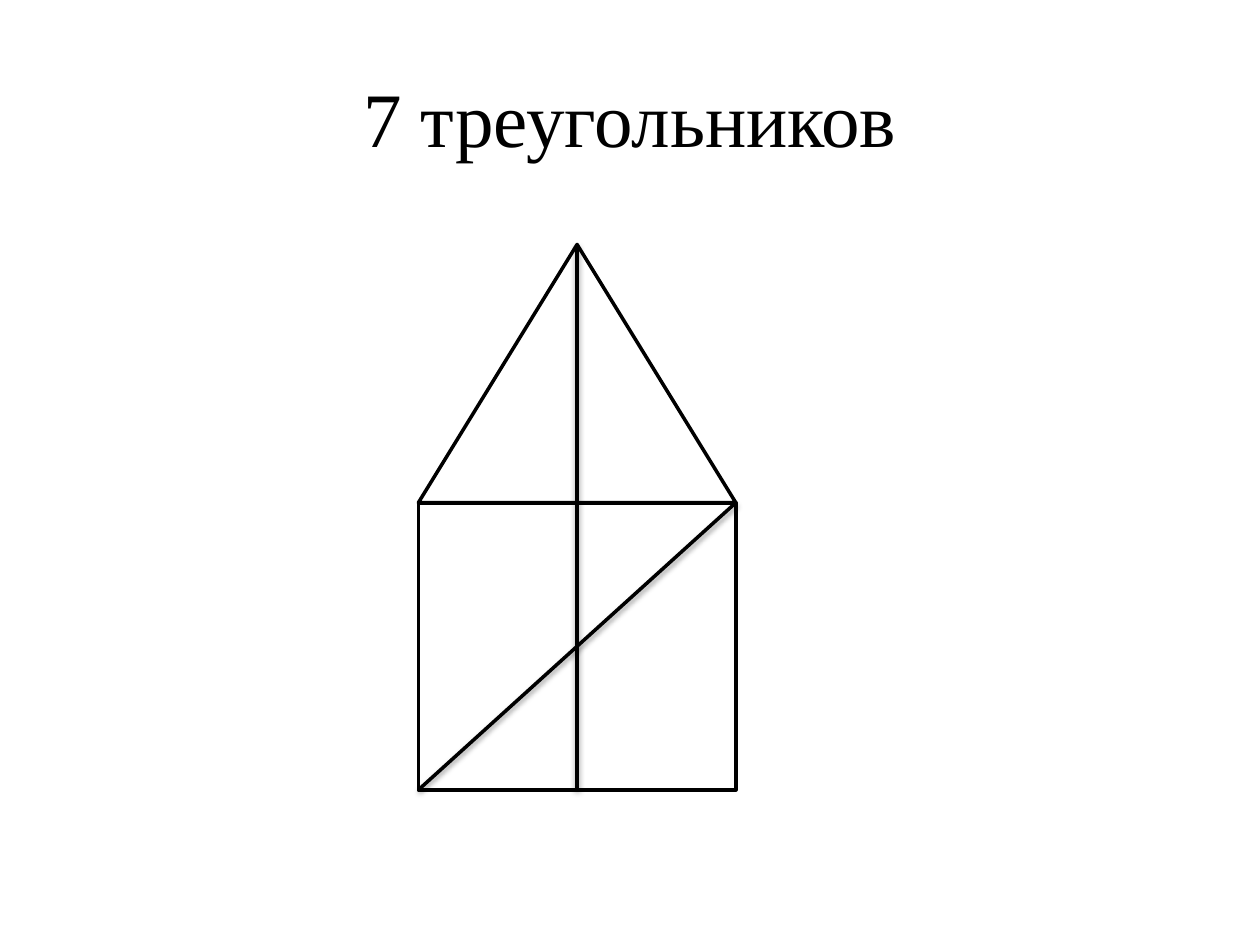
from dataclasses import dataclass

from lxml import etree
from pptx import Presentation
from pptx.dml.color import RGBColor
from pptx.enum.shapes import MSO_CONNECTOR, MSO_SHAPE
from pptx.enum.text import MSO_ANCHOR, PP_ALIGN
from pptx.oxml.ns import qn
from pptx.util import Inches, Pt

STRAIGHT = MSO_CONNECTOR.STRAIGHT
TRIANGLE = MSO_SHAPE.ISOSCELES_TRIANGLE
RECTANGLE = MSO_SHAPE.RECTANGLE
MIDDLE = MSO_ANCHOR.MIDDLE
CENTER = PP_ALIGN.CENTER
TOP_SITE, BOTTOM_SITE = 0, 2
BLANK_LAYOUT = 6


@dataclass(frozen=True)
class Theme:
    ink: RGBColor = RGBColor(0, 0, 0)
    paper: RGBColor = RGBColor(255, 255, 255)
    font: str = "Times New Roman"
    title_size: int = Pt(44)
    line_width: int = Pt(2)
    shadow_opacity: int = 38
    shadow_blur: int = Pt(3.15)
    shadow_distance: int = Pt(1.57)


THEME = Theme()


def apply_format(target, values):
    for name, value in values.items():
        setattr(target, name, value)


def style_line(line):
    line.color.rgb = THEME.ink
    line.width = THEME.line_width


def add_title(page, text, left, top, width, height):
    box = page.shapes.add_textbox(*map(Inches, (left, top, width, height)))
    apply_format(box.text_frame, {"word_wrap": True, "vertical_anchor": MIDDLE})
    para = box.text_frame.paragraphs[0]
    para.alignment = CENTER
    span = para.add_run()
    span.text = text
    apply_format(span.font, {"name": THEME.font, "size": THEME.title_size})
    span.font.color.rgb = THEME.ink


def add_outline(page, kind, left, top, width, height):
    shape = page.shapes.add_shape(kind, *map(Inches, (left, top, width, height)))
    shape.shadow.inherit = False
    shape.fill.solid()
    shape.fill.fore_color.rgb = THEME.paper
    style_line(shape.line)
    return shape


def add_drop_shadow(connector):
    """Cast a soft shadow straight down."""
    effects = etree.SubElement(connector._element.spPr, qn("a:effectLst"))
    shadow = etree.SubElement(
        effects,
        qn("a:outerShdw"),
        blurRad=str(int(THEME.shadow_blur)),
        dist=str(int(THEME.shadow_distance)),
        dir=str(90 * 60000),
        rotWithShape="0",
    )
    color = etree.SubElement(shadow, qn("a:srgbClr"), val=str(THEME.ink))
    etree.SubElement(color, qn("a:alpha"), val=str(THEME.shadow_opacity * 1000))


def add_segment(page, start, end):
    segment = page.shapes.add_connector(STRAIGHT, *map(Inches, (*start, *end)))
    style_line(segment.line)
    add_drop_shadow(segment)
    return segment


def main():
    deck = Presentation()
    deck.slide_width, deck.slide_height = Inches(10), Inches(7.5)
    page = deck.slides.add_slide(deck.slide_layouts[BLANK_LAYOUT])

    add_title(page, "7 треугольников", 0.5, 0.3, 9, 1.25)

    left, width = 3.32, 2.52
    apex, eaves, ground = 1.94, 3.99, 6.27
    right, middle = left + width, left + width / 2
    roof = add_outline(page, TRIANGLE, left, apex, width, eaves - apex)
    wall = add_outline(page, RECTANGLE, left, eaves, width, ground - eaves)

    axis = add_segment(page, (middle, apex), (middle, ground))
    axis.begin_connect(roof, TOP_SITE)
    axis.end_connect(wall, BOTTOM_SITE)
    add_segment(page, (left, ground), (right, eaves))

    deck.save("out.pptx")


if __name__ == "__main__":
    main()
